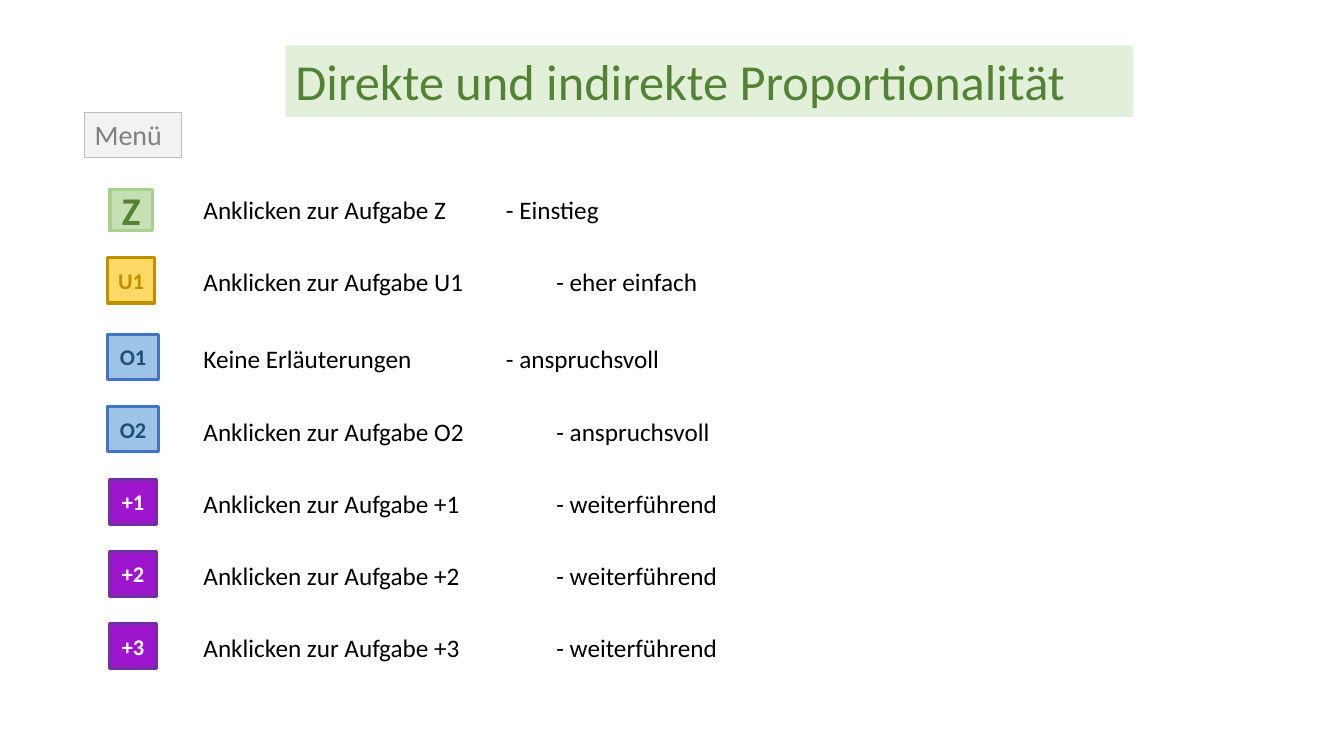
from dataclasses import dataclass

from pptx import Presentation
from pptx.dml.color import RGBColor
from pptx.enum.shapes import MSO_SHAPE
from pptx.enum.text import MSO_ANCHOR, MSO_AUTO_SIZE, PP_ALIGN
from pptx.util import Inches, Pt

WIDTH, HEIGHT = Inches(13.33), Inches(7.5)


@dataclass(frozen=True)
class Style:
    fill: str
    line: str
    text: str
    size: int
    line_width: float = 2.25


@dataclass(frozen=True)
class Theme:
    font: str = "Calibri"
    body: str = "000000"
    body_size: int = 18
    title: Style = Style("E2F0D9", "", "548235", 36)
    menu: Style = Style("F2F2F2", "BFBFBF", "808080", 20, 0.75)
    entry: Style = Style("C5E0B4", "A9D18E", "548235", 28)
    practice: Style = Style("FFD966", "BF9000", "BF9000", 16)
    optional: Style = Style("9DC3E6", "4472C4", "1F4E79", 16)
    extra: Style = Style("9D15CD", "7030A0", "FFFFFF", 16)


THEME = Theme()
ROW_PITCH = 9.56
LABEL_LEFT, LABEL_WIDTH, LABEL_HEIGHT = 14.4, 50.5, 5.33

ENTRY_BADGE = (8.18, 0, 3.15, 5.47)
PRACTICE_BADGE = (8.03, -0.55, 3.45, 6)
OPTIONAL_BADGE = (8.03, -0.6, 3.75, 6)
EXTRA_BADGE = (8.18, -0.55, 3.45, 6)

TASK_GROUPS = [
    (25.07, [
        ("Z", THEME.entry, ENTRY_BADGE, "Anklicken zur Aufgabe Z", "Einstieg"),
        ("U1", THEME.practice, PRACTICE_BADGE, "Anklicken zur Aufgabe U1", "eher einfach"),
    ]),
    (44.8, [
        ("O1", THEME.optional, OPTIONAL_BADGE, "Keine Erläuterungen", "anspruchsvoll"),
        ("O2", THEME.optional, OPTIONAL_BADGE, "Anklicken zur Aufgabe O2", "anspruchsvoll"),
        ("+1", THEME.extra, EXTRA_BADGE, "Anklicken zur Aufgabe +1", "weiterführend"),
        ("+2", THEME.extra, EXTRA_BADGE, "Anklicken zur Aufgabe +2", "weiterführend"),
        ("+3", THEME.extra, EXTRA_BADGE, "Anklicken zur Aufgabe +3", "weiterführend"),
    ]),
]


def place(left, top, width, height):
    return (int(WIDTH * left / 100), int(HEIGHT * top / 100),
            int(WIDTH * width / 100), int(HEIGHT * height / 100))


def write(sp, text, size, color, align=PP_ALIGN.LEFT, bold=False):
    tf = sp.text_frame
    tf.word_wrap = True
    p = tf.paragraphs[0]
    p.text = text
    p.alignment = align
    p.font.name = THEME.font
    p.font.size = Pt(size)
    p.font.bold = bold
    p.font.color.rgb = RGBColor.from_string(color)
    return tf


def add_box(s, area, style):
    sp = s.shapes.add_shape(MSO_SHAPE.RECTANGLE, *place(*area))
    sp.shadow.inherit = False
    sp.fill.solid()
    sp.fill.fore_color.rgb = RGBColor.from_string(style.fill)
    if style.line:
        sp.line.color.rgb = RGBColor.from_string(style.line)
        sp.line.width = Pt(style.line_width)
    else:
        sp.line.fill.background()
    return sp


def add_banner(s, area, text, style):
    tf = write(add_box(s, area, style), text, style.size, style.text)
    tf.vertical_anchor = MSO_ANCHOR.TOP
    tf.auto_size = MSO_AUTO_SIZE.SHAPE_TO_FIT_TEXT


def add_badge(s, area, text, style):
    tf = write(add_box(s, area, style), text, style.size, style.text,
               PP_ALIGN.CENTER, True)
    tf.vertical_anchor = MSO_ANCHOR.MIDDLE


def add_label(s, top, action, level):
    sp = s.shapes.add_textbox(*place(LABEL_LEFT, top, LABEL_WIDTH, LABEL_HEIGHT))
    tf = write(sp, f"{action}\t\t- {level}", THEME.body_size, THEME.body)
    tf.auto_size = MSO_AUTO_SIZE.SHAPE_TO_FIT_TEXT


def add_task(s, top, task):
    name, style, (left, shift, width, height), action, level = task
    add_badge(s, (left, top + shift, width, height), name, style)
    add_label(s, top, action, level)


def main():
    prs = Presentation()
    prs.slide_width, prs.slide_height = WIDTH, HEIGHT
    s = prs.slides.add_slide(prs.slide_layouts[6])
    add_banner(s, (21.25, 6, 63.05, 9.47),
               "Direkte und indirekte Proportionalität", THEME.title)
    add_banner(s, (6.3, 14.93, 7.2, 5.87), "Menü", THEME.menu)
    for start, tasks in TASK_GROUPS:
        for row, task in enumerate(tasks):
            add_task(s, start + row * ROW_PITCH, task)
    prs.save("out.pptx")


if __name__ == "__main__":
    main()
